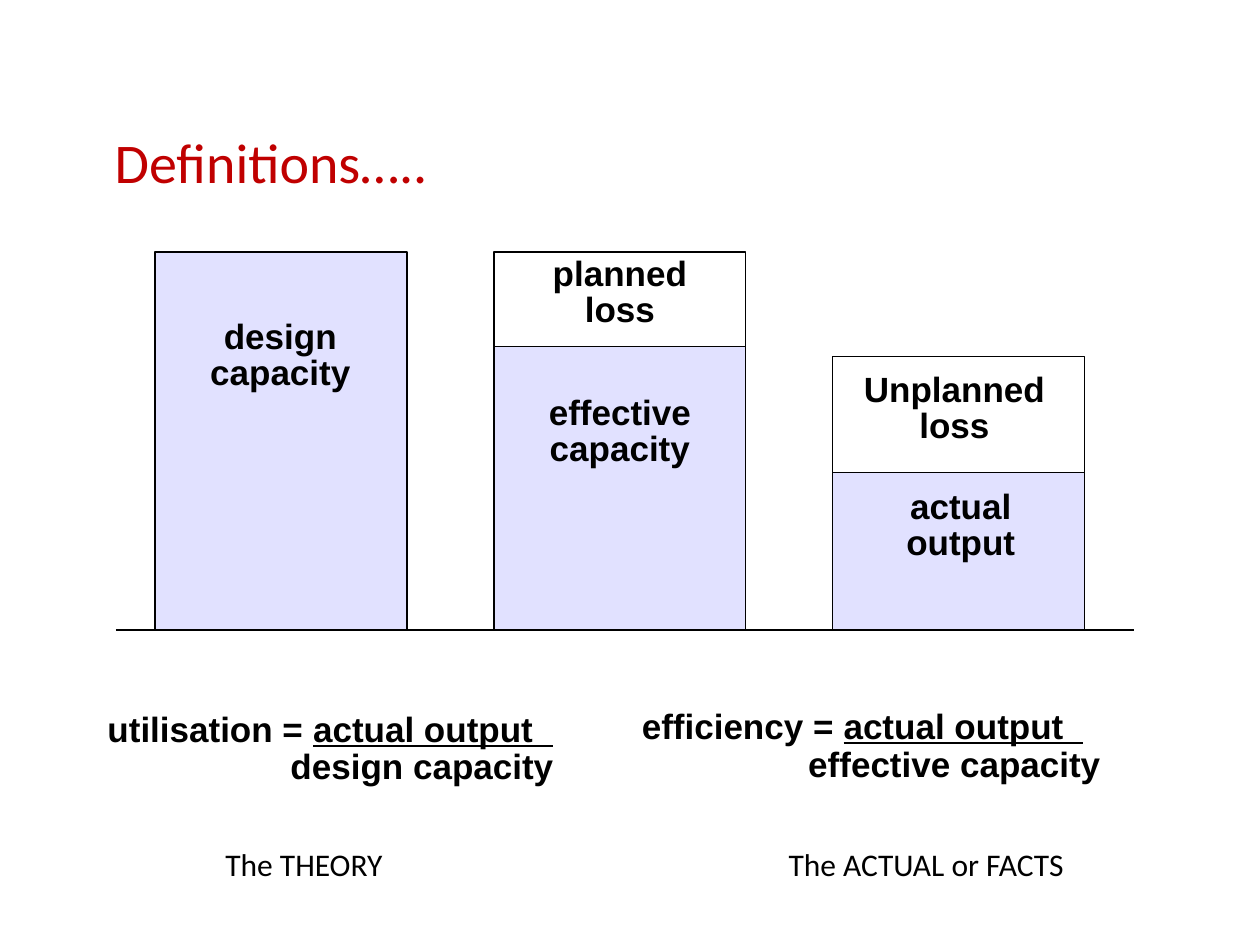
from pptx import Presentation
from pptx.dml.color import RGBColor
from pptx.enum.shapes import MSO_CONNECTOR as Line, MSO_SHAPE as Shape
from pptx.enum.text import MSO_ANCHOR as Anchor, MSO_AUTO_SIZE as Auto, PP_ALIGN as Align
from pptx.oxml.ns import qn
from pptx.util import Inches, Pt
from lxml import etree

BLACK = RGBColor(0x00, 0x00, 0x00)
RED = RGBColor(0xC0, 0x00, 0x00)
LAVENDER = RGBColor(0xE1, 0xE1, 0xFF)

COLUMNS, ROWS = 10, 7.5
BASE = 5
BAR_LEFT, BAR_PITCH, BAR_WIDTH = 1.23, 2.69, 2


class Deck:
    label_font = "Arial"
    body_font = "Calibri"

    def __init__(self):
        self.prs = Presentation()
        self.prs.slide_width, self.prs.slide_height = Inches(10), Inches(7.5)
        self.cell_w = self.prs.slide_width / COLUMNS
        self.cell_h = self.prs.slide_height / ROWS
        self.s = self.prs.slides.add_slide(self.prs.slide_layouts[5])

    def grid(self, x, y, w, h):
        return (round(x * self.cell_w), round(y * self.cell_h),
                round(w * self.cell_w), round(h * self.cell_h))

    def style(self, p, name, size, color=BLACK, bold=False, align=Align.LEFT, spacing=1.0):
        p.font.name, p.font.size, p.font.bold = name, Pt(size), bold
        p.font.color.rgb = color
        p.alignment, p.line_spacing = align, spacing

    def title(self, text, *box):
        sp = self.s.shapes.title
        sp.left, sp.top, sp.width, sp.height = self.grid(*box)
        tf = sp.text_frame
        tf.text = text
        tf.auto_size, tf.vertical_anchor = Auto.NONE, Anchor.MIDDLE
        self.style(tf.paragraphs[0], self.body_font, 32, RED)

    def baseline(self, x1, x2, y):
        left, top, right, bottom = self.grid(x1, y, x2, y)
        line = self.s.shapes.add_connector(Line.STRAIGHT, left, top, right, bottom)
        line.line.color.rgb, line.line.width = BLACK, Pt(0.75)
        etree.SubElement(line._element.spPr, qn("a:effectLst"))

    def block(self, column, top, bottom, fill=None):
        x = BAR_LEFT + column * BAR_PITCH
        sp = self.s.shapes.add_shape(Shape.RECTANGLE, *self.grid(x, top, BAR_WIDTH, bottom - top))
        sp.shadow.inherit = False
        if fill is None:
            sp.fill.background()
        else:
            sp.fill.solid()
            sp.fill.fore_color.rgb = fill
        sp.line.color.rgb, sp.line.width = BLACK, Pt(0.75)

    def text_box(self, box, wrap=True):
        tf = self.s.shapes.add_textbox(*self.grid(*box)).text_frame
        tf.word_wrap, tf.auto_size = wrap, Auto.SHAPE_TO_FIT_TEXT
        return tf

    def label(self, text, *box):
        p = self.text_box(box).paragraphs[0]
        p.text = text
        self.style(p, self.label_font, 20, bold=True, align=Align.CENTER, spacing=0.85)

    def ratio(self, name, top, bottom, *box):
        tf = self.text_box(box)
        upper, lower = tf.paragraphs[0], tf.add_paragraph()
        upper.add_run().text = f"{name} = "
        r = upper.add_run()
        r.text, r.font.underline = f"{top}  ", True
        lower.text = bottom
        lower._p.get_or_add_pPr().set("marL", str(Inches(1.46)))
        for p in (upper, lower):
            self.style(p, self.label_font, 20, bold=True, align=Align.CENTER, spacing=0.9)

    def caption(self, text, *box):
        p = self.text_box(box, wrap=False).paragraphs[0]
        p.text = text
        self.style(p, self.body_font, 18)


def main():
    deck = Deck()
    deck.title("Definitions…..", 0.81, 1.1, 8.68, 0.35)
    deck.baseline(0.92, 9, BASE)

    for column, top, split in ((0, 2, 2), (1, 2, 2.75), (2, 2.83, 3.75)):
        deck.block(column, split, BASE, LAVENDER)
        if split > top:
            deck.block(column, top, split)

    for text, x, y, w in (
        ("design capacity", 1.53, 2.5, 1.39),
        ("effective capacity", 4.23, 3.1, 1.38),
        ("actual output", 6.93, 3.85, 1.39),
        ("planned loss", 4.23, 2, 1.38),
        ("Unplanned loss", 6.69, 2.92, 1.77),
    ):
        deck.label(text, x, y, w, 0.67)

    deck.ratio("utilisation", "actual output", "design capacity", 0.54, 5.6, 4.16, 0.7)
    deck.ratio("efficiency", "actual output", "effective capacity", 4.69, 5.58, 4.31, 0.7)
    deck.caption("The THEORY", 1.69, 6.66, 1.46, 0.4)
    deck.caption("The ACTUAL or FACTS", 6.16, 6.66, 2.41, 0.4)
    deck.prs.save("out.pptx")


if __name__ == "__main__":
    main()
